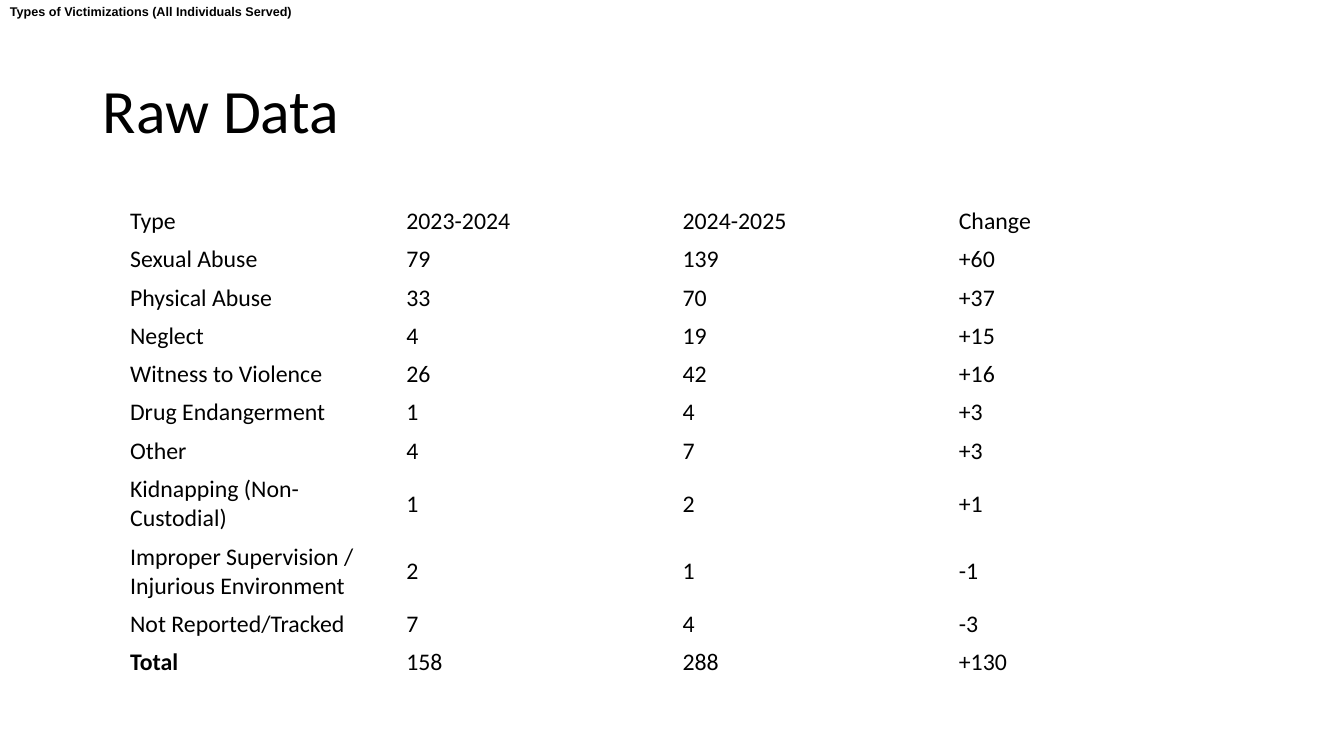
import pptx
import pptx.dml.color
import pptx.enum.text
import pptx.util

Inches = pptx.util.Inches
Anchor = pptx.enum.text.MSO_ANCHOR

ROWS = [
    ("Type", "2023-2024", "2024-2025", "Change"),
    ("Sexual Abuse", "79", "139", "+60"),
    ("Physical Abuse", "33", "70", "+37"),
    ("Neglect", "4", "19", "+15"),
    ("Witness to Violence", "26", "42", "+16"),
    ("Drug Endangerment", "1", "4", "+3"),
    ("Other", "4", "7", "+3"),
    ("Kidnapping (Non-Custodial)", "1", "2", "+1"),
    ("Improper Supervision / Injurious Environment", "2", "1", "-1"),
    ("Not Reported/Tracked", "7", "4", "-3"),
    ("Total", "158", "288", "+130"),
]
COLUMN_WIDTH = 2.74
ROW_HEIGHT = 0.38
TWO_LINE_ROW_HEIGHT = 0.67
ONE_LINE_LIMIT = 20


def color(value):
    return pptx.dml.color.RGBColor.from_string(value)


def set_attributes(target, values):
    for name, value in values.items():
        setattr(target, name, value)


class RawDataSlide:
    text_color = "000000"
    body_font = "Calibri"
    header_font = "Arial"
    cell_format = {
        "margin_left": Inches(0.1),
        "margin_right": Inches(0.1),
        "margin_top": Inches(0.05),
        "margin_bottom": Inches(0.04),
        "vertical_anchor": Anchor.MIDDLE,
    }
    table_format = {"first_row": False, "horz_banding": False}

    def __init__(self, presentation):
        self.slide = presentation.slides.add_slide(presentation.slide_layouts[6])

    def add_run(self, paragraph, text, size, font, bold=False):
        run = paragraph.add_run()
        run.text = text
        set_attributes(run.font, {"name": font, "size": pptx.util.Pt(size), "bold": bold})
        run.font.color.rgb = color(self.text_color)

    def add_text(self, text, box, size, font, frame_format, bold=False, line_spacing=1.0):
        shape = self.slide.shapes.add_textbox(*map(Inches, box))
        set_attributes(shape.text_frame, {"word_wrap": True, **frame_format})
        paragraph = shape.text_frame.paragraphs[0]
        paragraph.line_spacing = line_spacing
        self.add_run(paragraph, text, size, font, bold)

    def add_table(self, rows, left, top):
        heights = [
            TWO_LINE_ROW_HEIGHT if len(row[0]) > ONE_LINE_LIMIT else ROW_HEIGHT
            for row in rows
        ]
        column_count = len(rows[0])
        box = (left, top, COLUMN_WIDTH * column_count, sum(heights))
        table = self.slide.shapes.add_table(len(rows), column_count, *map(Inches, box)).table
        set_attributes(table, self.table_format)
        for column in table.columns:
            column.width = Inches(COLUMN_WIDTH)
        for table_row, height, texts in zip(table.rows, heights, rows):
            table_row.height = Inches(height)
            for cell, text in zip(table_row.cells, texts):
                set_attributes(cell, self.cell_format)
                cell.fill.background()
                paragraph = cell.text_frame.paragraphs[0]
                self.add_run(paragraph, text, 17, self.body_font, text == "Total")


def main():
    presentation = pptx.Presentation()
    set_attributes(presentation, {"slide_width": Inches(13.33), "slide_height": Inches(7.5)})
    raw_data = RawDataSlide(presentation)
    raw_data.add_text(
        "Raw Data", (0.92, 0.4, 11.5, 1.45), 44, raw_data.body_font,
        {"vertical_anchor": Anchor.MIDDLE}, line_spacing=0.9,
    )
    raw_data.add_table(ROWS, 1.19, 2)
    raw_data.add_text(
        "Types of Victimizations (All Individuals Served)", (0, 0, 13.33, 0.5), 9,
        raw_data.header_font,
        {"vertical_anchor": Anchor.TOP, "margin_top": Inches(0.04)}, bold=True,
    )
    presentation.save("out.pptx")


if __name__ == "__main__":
    main()
